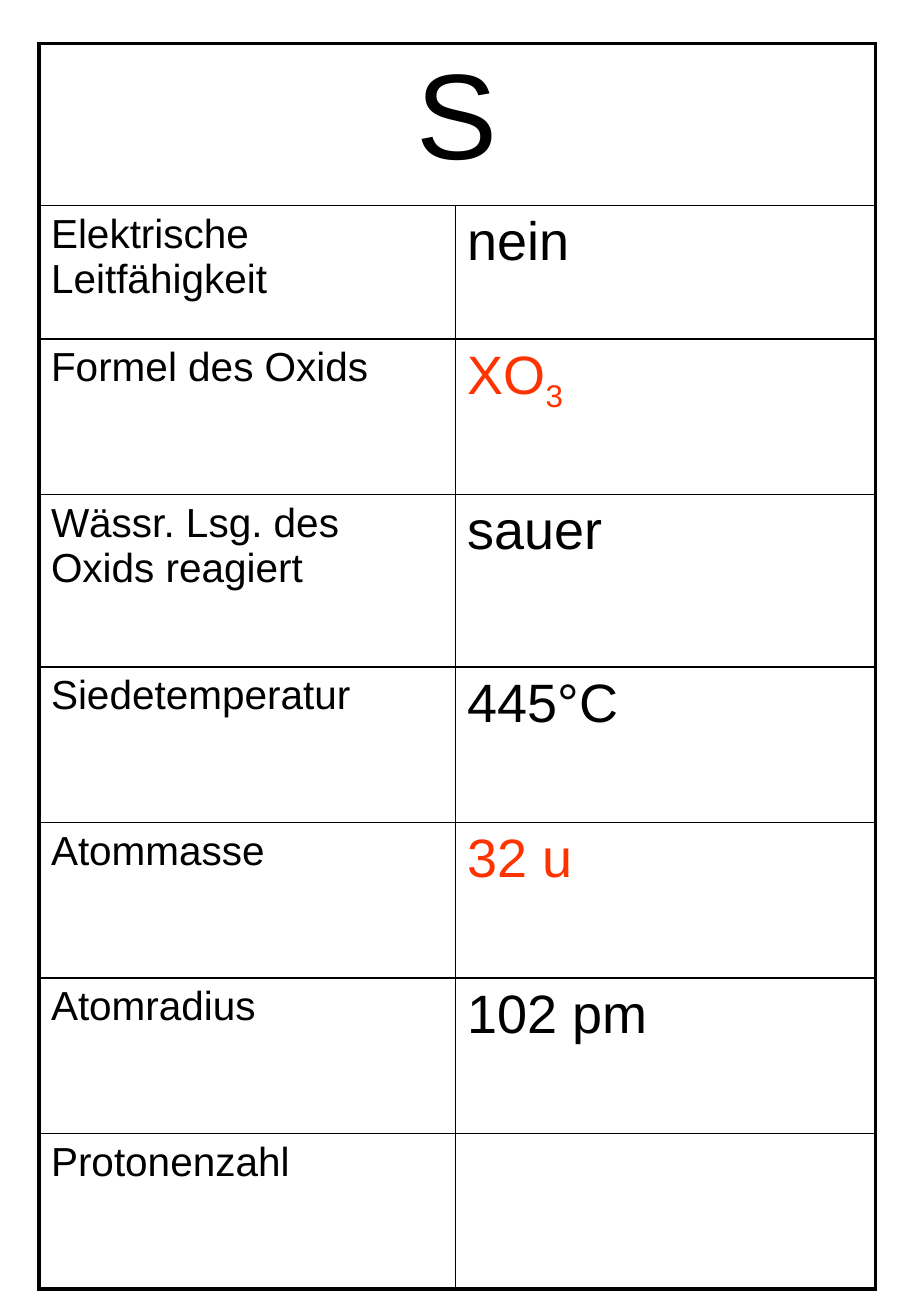
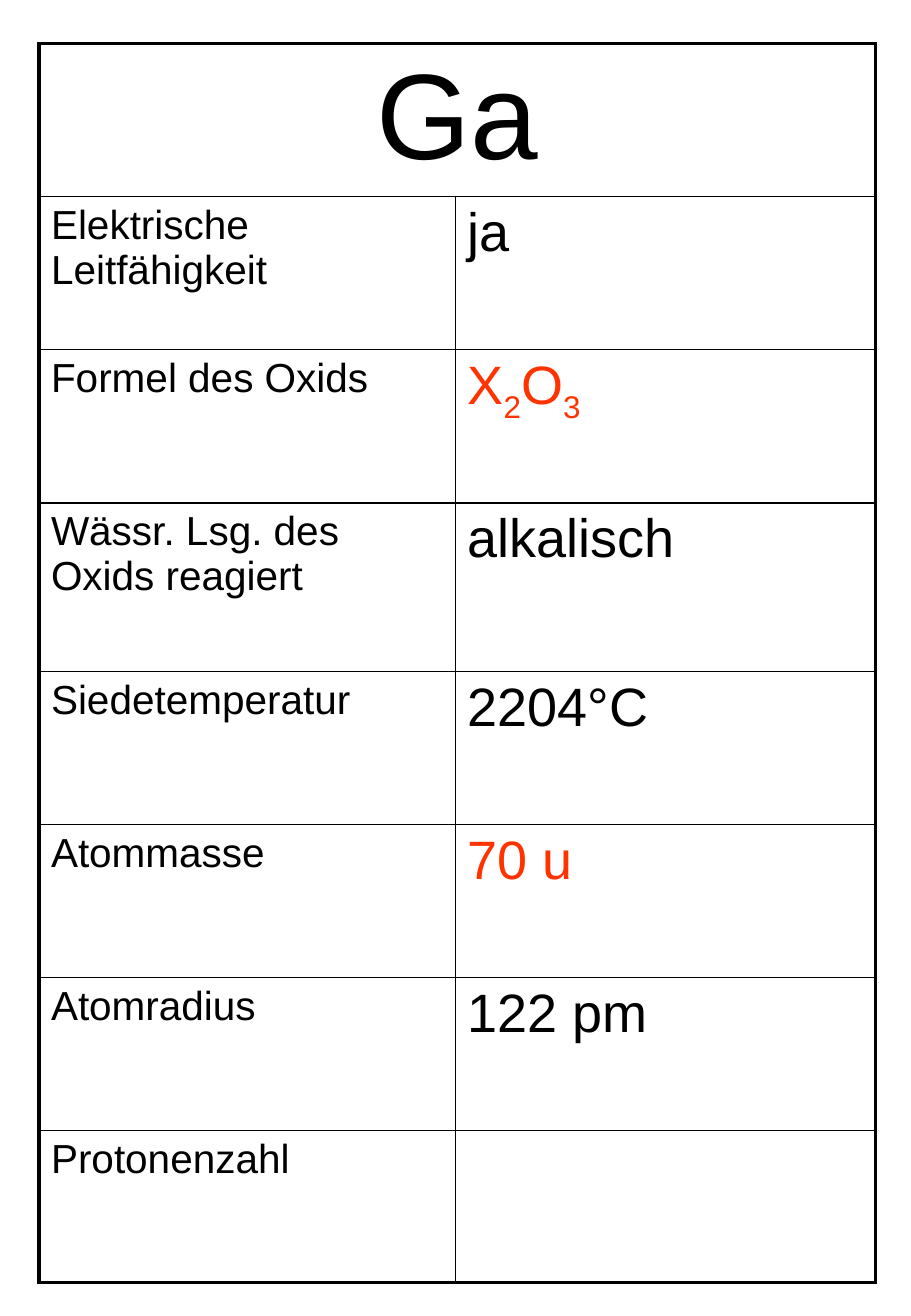
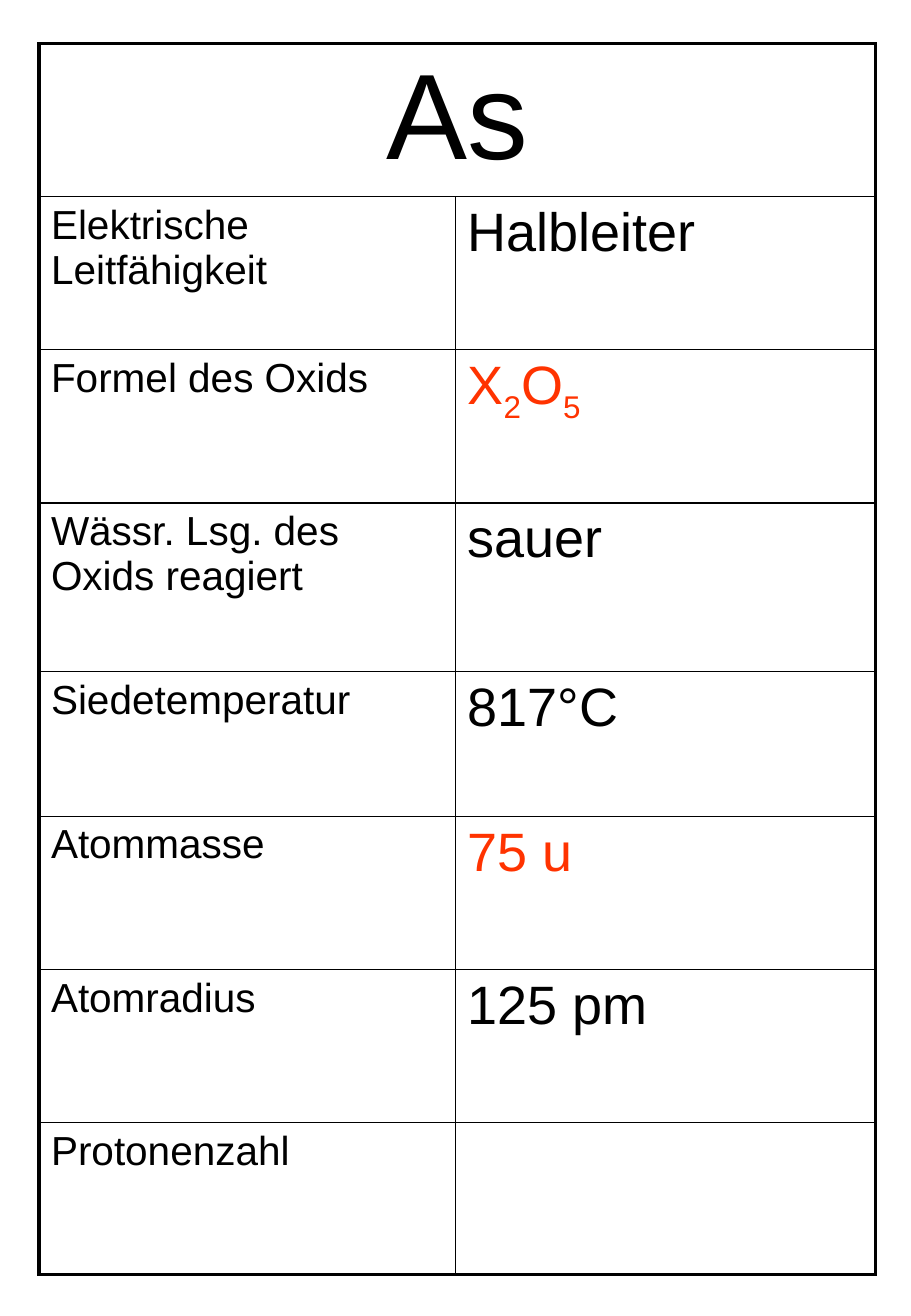
import itertools

import lxml.etree
import pptx
import pptx.dml.color
import pptx.enum.text
import pptx.oxml
import pptx.oxml.ns
import pptx.util

PROPERTIES = [
    "Elektrische Leitfähigkeit",
    "Formel des Oxids",
    "Wässr. Lsg. des Oxids reagiert",
    "Siedetemperatur",
    "Atommasse",
    "Atomradius",
    "Protonenzahl",
]
FORMULA_ROW = PROPERTIES.index("Formel des Oxids")
HINT_ROWS = {FORMULA_ROW, PROPERTIES.index("Atommasse")}

# Row heights in percent of the slide height, header row first
CARDS = [
    ("S", ["nein", "XO3", "sauer", "445°C", "32 u", "102 pm", ""],
     [12.28, 10.16, 11.82, 13.11] + [11.82] * 4),
    ("Ga", ["ja", "X2O3", "alkalisch", "2204°C", "70 u", "122 pm", ""],
     [11.63] * 3 + [12.83] + [11.63] * 3 + [11.54]),
    ("As", ["Halbleiter", "X2O5", "sauer", "817°C", "75 u", "125 pm", ""],
     [11.63] * 3 + [12.83, 10.99] + [11.63] * 2 + [11.54]),
]


def color(hex_string):
    return pptx.dml.color.RGBColor.from_string(hex_string)


class CardDeck:
    FONT = "Arial"
    INK, HINT = "000000", "FF3300"
    SYMBOL_SIZE, LABEL_SIZE, VALUE_SIZE = 72, 24, 32
    THIN, THICK = 1, 2.25
    LEFT, TOP = 4.27, 3.32
    COLUMNS = [45.73, 46.13]
    PLAIN_TABLE = "{2D5ABB26-0587-4C30-8999-92F81FD0307C}"

    def __init__(self):
        self.presentation = pptx.Presentation()
        self.presentation.slide_width = pptx.util.Inches(7.5)
        self.presentation.slide_height = pptx.util.Inches(10.83)
        self.slide = None

    def across(self, percent):
        return round(self.presentation.slide_width * percent / 100)

    def down(self, percent):
        return round(self.presentation.slide_height * percent / 100)

    def add_card(self, symbol, values, heights):
        blank_layout = self.presentation.slide_layouts[6]
        self.slide = self.presentation.slides.add_slide(blank_layout)
        table = self.add_grid(heights)
        self.fill_cell(table.cell(0, 0), [symbol], self.SYMBOL_SIZE,
                       alignment=pptx.enum.text.PP_ALIGN.CENTER)
        for index, (label, value) in enumerate(zip(PROPERTIES, values)):
            self.fill_cell(table.cell(index + 1, 0), [label], self.LABEL_SIZE)
            parts = [value] if value else []
            if index == FORMULA_ROW:
                parts = ["".join(group) for _, group
                         in itertools.groupby(value, str.isdigit)]
            self.fill_cell(table.cell(index + 1, 1), parts, self.VALUE_SIZE,
                           self.HINT if index in HINT_ROWS else self.INK)

    def add_grid(self, heights):
        """Add the ruled table with its header row merged."""
        frame = self.slide.shapes.add_table(
            len(heights), len(self.COLUMNS),
            self.across(self.LEFT), self.down(self.TOP),
            self.across(sum(self.COLUMNS)), self.down(sum(heights)))
        table = frame.table
        table.first_row = table.horz_banding = False
        style = table._tbl.tblPr.find(pptx.oxml.ns.qn("a:tableStyleId"))
        style.text = self.PLAIN_TABLE
        for column, width in zip(table.columns, self.COLUMNS):
            column.width = self.across(width)
        for row, height in zip(table.rows, heights):
            row.height = self.down(height)
        table.cell(0, 0).merge(table.cell(0, 1))
        last_row, last_column = len(heights) - 1, len(self.COLUMNS) - 1
        for row, column in itertools.product(range(len(heights)),
                                             range(len(self.COLUMNS))):
            cell = table.cell(row, column)
            outer = {
                "lnL": column == 0,
                "lnR": column == last_column or cell.is_merge_origin,
                "lnT": row == 0,
                "lnB": row == last_row,
            }
            if cell.is_spanned:
                del outer["lnL"]
            for side, is_outer in outer.items():
                self.add_border(cell, side,
                                self.THICK if is_outer else self.THIN)
            cell.fill.background()
        return table

    def add_border(self, cell, side, points):
        qn = pptx.oxml.ns.qn
        properties = cell._tc.get_or_add_tcPr()
        line = lxml.etree.SubElement(properties, qn("a:" + side),
                                     w=str(pptx.util.Pt(points)))
        fill = lxml.etree.SubElement(line, qn("a:solidFill"))
        lxml.etree.SubElement(fill, qn("a:srgbClr"), val=self.INK)

    def fill_cell(self, cell, parts, size, ink=INK, alignment=None):
        """Add the parts as runs; every second one is a subscript."""
        qn = pptx.oxml.ns.qn
        paragraph = cell.text_frame.paragraphs[0]
        paragraph.alignment = alignment
        paragraph.font.size = pptx.util.Pt(size)
        spacing = lxml.etree.Element(qn("a:spcBef"))
        lxml.etree.SubElement(spacing, qn("a:spcPct"), val="20000")
        paragraph._p.get_or_add_pPr().insert(0, spacing)
        for index, part in enumerate(parts):
            run = paragraph.add_run()
            run.text = part
            run.font.name = self.FONT
            run.font.size = pptx.util.Pt(size)
            run.font.color.rgb = color(ink)
            if index % 2:
                run._r.get_or_add_rPr().set("baseline", "-25000")


def main():
    deck = CardDeck()
    for symbol, values, heights in CARDS:
        deck.add_card(symbol, values, heights)
    deck.presentation.save("out.pptx")


if __name__ == "__main__":
    main()
